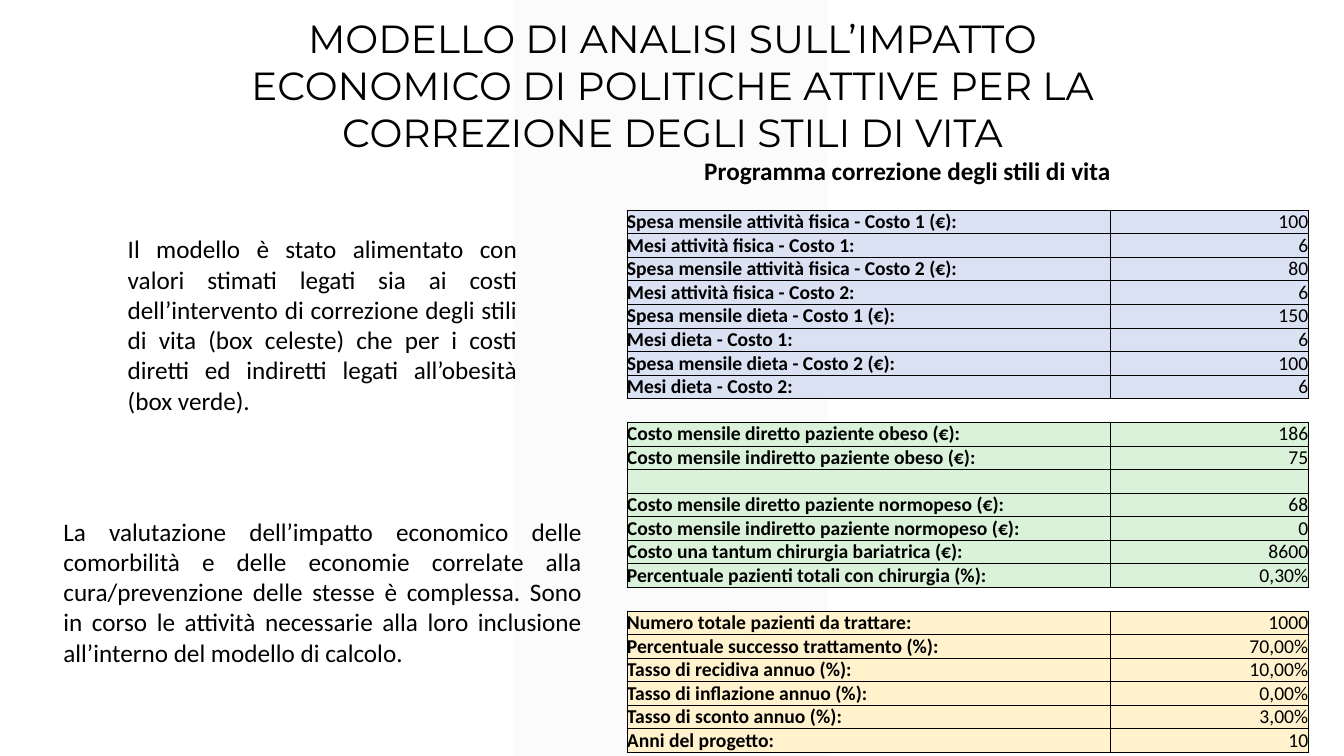
from dataclasses import dataclass

from lxml import etree
from pptx import Presentation
from pptx.dml.color import RGBColor
from pptx.enum import shapes, text
from pptx.oxml import ns
from pptx.util import Pt

COLORS = {
    "ink": "000000",
    "band": "F2F2F2",
    "blue": "D9E1F2",
    "green": "D9F2D9",
    "yellow": "FFF2CC",
}
ALIGN = text.PP_ALIGN
NO_GRID_STYLE = "{2D5ABB26-0587-4C30-8999-92F81FD0307C}"
HEADING_HEIGHT = 20.9
ROW_HEIGHT = 16.85
COLUMN_WIDTHS = (345.6, 141.1)
BORDER_WIDTH = 0.5


@dataclass(frozen=True)
class Note:
    left: float
    top: float
    width: float
    height: float
    words: str


@dataclass(frozen=True)
class Block:
    color: str
    rows: tuple[tuple[str, str], ...]


TITLE = Note(
    136.1, 6.5, 688.3, 108.7,
    "MODELLO DI ANALISI SULL’IMPATTO ECONOMICO DI POLITICHE ATTIVE "
    "PER LA CORREZIONE DEGLI STILI DI VITA",
)
NOTES = (
    Note(
        84.2, 163.4, 292.3, 138.2,
        "Il modello è stato alimentato con valori stimati legati sia ai costi "
        "dell’intervento di correzione degli stili di vita (box celeste) che per "
        "i costi diretti ed indiretti legati all’obesità (box verde).",
    ),
    Note(
        38.2, 365, 384.5, 116.6,
        "La valutazione dell’impatto economico delle comorbilità e delle economie "
        "correlate alla cura/prevenzione delle stesse è complessa. Sono in corso le "
        "attività necessarie alla loro inclusione all’interno del modello di calcolo.",
    ),
)
BLOCKS = (
    Block("blue", (
        ("Spesa mensile attività fisica - Costo 1 (€):", "100"),
        ("Mesi attività fisica - Costo 1:", "6"),
        ("Spesa mensile attività fisica - Costo 2 (€):", "80"),
        ("Mesi attività fisica - Costo 2:", "6"),
        ("Spesa mensile dieta - Costo 1 (€):", "150"),
        ("Mesi dieta - Costo 1:", "6"),
        ("Spesa mensile dieta - Costo 2 (€):", "100"),
        ("Mesi dieta - Costo 2:", "6"),
    )),
    Block("green", (
        ("Costo mensile diretto paziente obeso (€):", "186"),
        ("Costo mensile indiretto paziente obeso (€):", "75"),
        ("", ""),
        ("Costo mensile diretto paziente normopeso (€):", "68"),
        ("Costo mensile indiretto paziente normopeso (€):", "0"),
        ("Costo una tantum chirurgia bariatrica (€):", "8600"),
        ("Percentuale pazienti totali con chirurgia (%):", "0,30%"),
    )),
    Block("yellow", (
        ("Numero totale pazienti da trattare:", "1000"),
        ("Percentuale successo trattamento (%):", "70,00%"),
        ("Tasso di recidiva annuo (%):", "10,00%"),
        ("Tasso di inflazione annuo (%):", "0,00%"),
        ("Tasso di sconto annuo (%):", "3,00%"),
        ("Anni del progetto:", "10"),
    )),
)


def rgb(name: str) -> RGBColor:
    return RGBColor.from_string(COLORS[name])


def style_paragraph(para, size: float, align, face: str = "Calibri", bold: bool = False) -> None:
    para.alignment = align
    for target in (para, *para.runs):
        target.font.name = face
        target.font.size = Pt(size)
        target.font.bold = bold
        target.font.color.rgb = rgb("ink")


def fill_note(box, note: Note, size: float, align, face: str = "Calibri") -> None:
    box.left, box.top = Pt(note.left), Pt(note.top)
    box.width, box.height = Pt(note.width), Pt(note.height)
    frame = box.text_frame
    frame.text = note.words
    frame.word_wrap = True
    frame.auto_size = text.MSO_AUTO_SIZE.SHAPE_TO_FIT_TEXT
    frame.vertical_anchor = text.MSO_ANCHOR.TOP
    style_paragraph(frame.paragraphs[0], size, align, face)


def draw_band(page) -> None:
    band = page.shapes.add_shape(
        shapes.MSO_SHAPE.PARALLELOGRAM, Pt(367.2), Pt(0), Pt(224.6), Pt(540))
    band.adjustments[0] = 0
    band.shadow.inherit = False
    band.line.fill.background()
    band.fill.solid()
    band.fill.fore_color.rgb = rgb("band")
    color = band._element.spPr.find(".//" + ns.qn("a:srgbClr"))
    etree.SubElement(color, ns.qn("a:alpha"), val="30000")
    page.shapes._spTree.insert(2, band._element)


def add_borders(cell) -> None:
    properties = cell._tc.get_or_add_tcPr()
    for side in ("lnL", "lnR", "lnT", "lnB"):
        line = etree.SubElement(properties, ns.qn(f"a:{side}"), w=str(Pt(BORDER_WIDTH)))
        fill = etree.SubElement(line, ns.qn("a:solidFill"))
        etree.SubElement(fill, ns.qn("a:srgbClr"), val=COLORS["ink"])


def write_cell(cell, words: str, size: float, align, bold: bool) -> None:
    cell.text = words
    para = cell.text_frame.paragraphs[0]
    style_paragraph(para, size, align, bold=bold)
    if not words:
        para._p.get_or_add_endParaRPr().set("sz", str(size * 100))
    cell.vertical_anchor = text.MSO_ANCHOR.BOTTOM
    cell.margin_left = cell.margin_right = cell.margin_top = cell.margin_bottom = 0


def draw_table(page) -> None:
    lines = [("", "", None)]
    for block in BLOCKS:
        lines += [(label, value, block.color) for label, value in block.rows]
        lines.append(("", "", None))
    lines.pop()

    height = HEADING_HEIGHT + ROW_HEIGHT * len(lines)
    frame = page.shapes.add_table(
        len(lines) + 1, 2, Pt(447.8), Pt(111.6), Pt(sum(COLUMN_WIDTHS)), Pt(height))
    table = frame.table
    table.first_row = table.horz_banding = False
    table._tbl.tblPr.find(ns.qn("a:tableStyleId")).text = NO_GRID_STYLE
    for column, width in zip(table.columns, COLUMN_WIDTHS):
        column.width = Pt(width)
    for row in table.rows:
        row.height = Pt(ROW_HEIGHT)
    table.rows[0].height = Pt(HEADING_HEIGHT)

    write_cell(table.cell(0, 0), "Programma correzione degli stili di vita", 18, ALIGN.RIGHT, True)
    write_cell(table.cell(0, 1), "", 14, ALIGN.RIGHT, False)
    for index, (label, value, color) in enumerate(lines, start=1):
        write_cell(table.cell(index, 0), label, 14, ALIGN.LEFT, True)
        write_cell(table.cell(index, 1), value, 14, ALIGN.RIGHT, False)
        if color:
            for cell in table.rows[index].cells:
                add_borders(cell)
                cell.fill.solid()
                cell.fill.fore_color.rgb = rgb(color)


def main() -> None:
    deck = Presentation()
    deck.slide_width, deck.slide_height = Pt(960), Pt(540)
    page = deck.slides.add_slide(deck.slide_layouts[5])
    draw_band(page)
    fill_note(page.shapes.title, TITLE, 28, ALIGN.CENTER, "Montserrat")
    draw_table(page)
    for note in NOTES:
        box = page.shapes.add_textbox(0, 0, 0, 0)
        fill_note(box, note, 18, ALIGN.JUSTIFY)
    deck.save("out.pptx")


if __name__ == "__main__":
    main()
